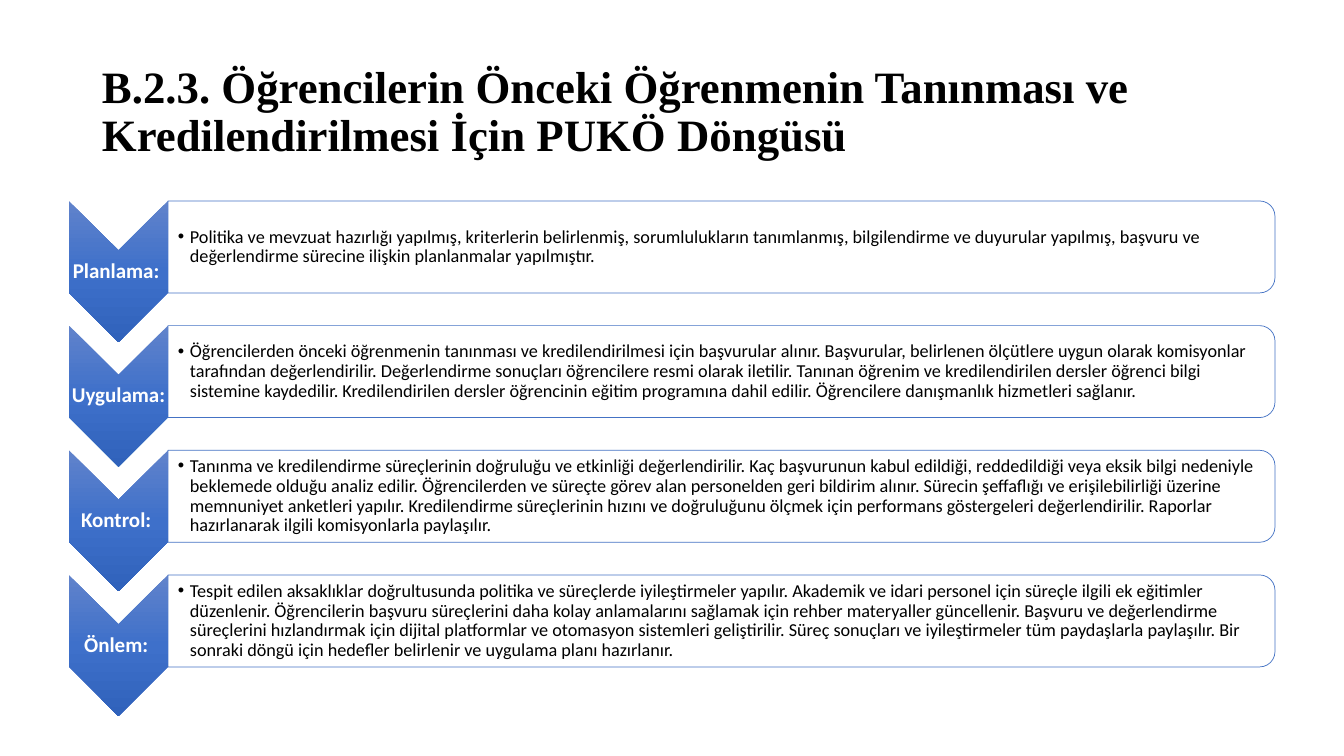
"""Build the slide on the four steps of the prior learning cycle."""
import copy

import lxml.etree
import pptx
import pptx.dml.color
import pptx.enum.shapes
import pptx.enum.text
import pptx.oxml.ns
import pptx.util

TITLE = "B.2.3. Öğrencilerin Önceki Öğrenmenin Tanınması ve Kredilendirilmesi İçin PUKÖ Döngüsü"
STEPS = [
    ("Planlama: ",
     "Politika ve mevzuat hazırlığı yapılmış, kriterlerin belirlenmiş, sorumlulukların tanımlanmış, "
     "bilgilendirme ve duyurular yapılmış, başvuru ve değerlendirme sürecine ilişkin planlanmalar "
     "yapılmıştır."),
    ("Uygulama: ",
     "Öğrencilerden önceki öğrenmenin tanınması ve kredilendirilmesi için başvurular alınır. "
     "Başvurular, belirlenen ölçütlere uygun olarak komisyonlar tarafından değerlendirilir. "
     "Değerlendirme sonuçları öğrencilere resmi olarak iletilir. Tanınan öğrenim ve kredilendirilen "
     "dersler öğrenci bilgi sistemine kaydedilir. Kredilendirilen dersler öğrencinin eğitim programına "
     "dahil edilir. Öğrencilere danışmanlık hizmetleri sağlanır."),
    ("Kontrol: ",
     "Tanınma ve kredilendirme süreçlerinin doğruluğu ve etkinliği değerlendirilir. Kaç başvurunun "
     "kabul edildiği, reddedildiği veya eksik bilgi nedeniyle beklemede olduğu analiz edilir. "
     "Öğrencilerden ve süreçte görev alan personelden geri bildirim alınır. Sürecin şeffaflığı ve "
     "erişilebilirliği üzerine memnuniyet anketleri yapılır. Kredilendirme süreçlerinin hızını ve "
     "doğruluğunu ölçmek için performans göstergeleri değerlendirilir. Raporlar hazırlanarak ilgili "
     "komisyonlarla paylaşılır."),
    ("Önlem: ",
     "Tespit edilen aksaklıklar doğrultusunda politika ve süreçlerde iyileştirmeler yapılır. Akademik "
     "ve idari personel için süreçle ilgili ek eğitimler düzenlenir. Öğrencilerin başvuru süreçlerini "
     "daha kolay anlamalarını sağlamak için rehber materyaller güncellenir. Başvuru ve değerlendirme "
     "süreçlerini hızlandırmak için dijital platformlar ve otomasyon sistemleri geliştirilir. Süreç "
     "sonuçları ve iyileştirmeler tüm paydaşlarla paylaşılır. Bir sonraki döngü için hedefler "
     "belirlenir ve uygulama planı hazırlanır."),
]

RGB = pptx.dml.color.RGBColor
BLACK = RGB(0x00, 0x00, 0x00)
WHITE = RGB(0xFF, 0xFF, 0xFF)
BLUE = RGB(0x44, 0x72, 0xC4)
SHADES = [(0, RGB(0x61, 0x83, 0xCB)), (0.5, RGB(0x3E, 0x70, 0xCA)), (1, RGB(0x30, 0x62, 0xBB))]

WIDE, HIGH = 1344, 756
SCALE = 12192000 / WIDE
LEFT, FIRST, LAST = 69, 201, 575
ARROW_W, ARROW_H = 99, 141
PANEL_W, PANEL_H = 1107, 92
PAD = 5
HANG = 12

SHAPE = pptx.enum.shapes.MSO_SHAPE
ALIGN = pptx.enum.text.PP_ALIGN
qn = pptx.oxml.ns.qn


def px(size):
    return pptx.util.Emu(round(size * SCALE))


def add_turned(slide, kind, x, y, w, h):
    """Add a shape turned a quarter so that it covers the given area."""
    shape = slide.shapes.add_shape(
        kind, px(x + (w - h) / 2), px(y + (h - w) / 2), px(h), px(w))
    shape.rotation = 90
    shape.shadow.inherit = False
    return shape


def add_text(slide, area, text, font, size, color, bold, align, inset):
    """Add a one-paragraph box, centred in height, and return the paragraph."""
    frame = slide.shapes.add_textbox(*map(px, area)).text_frame
    frame.word_wrap = True
    frame.vertical_anchor = pptx.enum.text.MSO_ANCHOR.MIDDLE
    (frame.margin_left, frame.margin_top,
     frame.margin_right, frame.margin_bottom) = map(px, inset)
    para = frame.paragraphs[0]
    para.alignment = align
    para.line_spacing = 0.9
    run = para.add_run()
    run.text = text
    run.font.name = font
    run.font.size = pptx.util.Pt(size)
    run.font.bold = bold
    run.font.color.rgb = color
    return para


def add_bullet(para):
    props = para._p.get_or_add_pPr()
    props.set("marL", str(px(HANG)))
    props.set("indent", str(-px(HANG)))
    lxml.etree.SubElement(props, qn("a:buFont")).set("typeface", "Arial")
    lxml.etree.SubElement(props, qn("a:buChar")).set("char", "•")


def shade(shape):
    shape.fill.gradient()
    grad = shape._element.spPr.find(qn("a:gradFill"))
    grad.set("rotWithShape", "0")
    grad.find(qn("a:lin")).set("ang", "5400000")
    stops = grad.find(qn("a:gsLst"))
    stops.insert(1, copy.deepcopy(stops[0]))
    for stop, (place, color) in zip(shape.fill.gradient_stops, SHADES):
        stop.position = place
        stop.color.rgb = color


def add_step(slide, top, label, body):
    panel_x = LEFT + ARROW_W
    panel = add_turned(slide, SHAPE.ROUND_2_SAME_RECTANGLE, panel_x, top, PANEL_W, PANEL_H)
    panel.fill.solid()
    panel.fill.fore_color.rgb = WHITE
    tint = panel._element.spPr.find(qn("a:solidFill"))[0]
    lxml.etree.SubElement(tint, qn("a:alpha")).set("val", "90000")
    panel.line.color.rgb = BLUE
    panel.line.width = pptx.util.Pt(0.5)

    arrow = add_turned(slide, SHAPE.CHEVRON, LEFT, top, ARROW_W, ARROW_H)
    shade(arrow)
    arrow.line.fill.background()

    notch = ARROW_W / 2
    add_text(slide, (LEFT, top + notch, ARROW_W, ARROW_H - 2 * notch), label,
             "Calibri", 15, WHITE, True, ALIGN.CENTER, (1, 1, 1, 1))
    area = (panel_x, top + PAD, PANEL_W - PAD, PANEL_H - 2 * PAD)
    add_bullet(add_text(slide, area, body, "Calibri", 13, BLACK, False,
                        ALIGN.LEFT, (10, 1, 1, 1)))


def main():
    deck = pptx.Presentation()
    deck.slide_width, deck.slide_height = px(WIDE), px(HIGH)
    slide = deck.slides.add_slide(deck.slide_layouts[6])
    add_text(slide, (92, 40, 1159, 146), TITLE, "Times New Roman", 32, BLACK, True,
             ALIGN.LEFT, (10, 5, 10, 5))
    pitch = (LAST - FIRST) / (len(STEPS) - 1)
    for i, (label, body) in enumerate(STEPS):
        add_step(slide, FIRST + i * pitch, label, body)
    deck.save("out.pptx")


if __name__ == "__main__":
    main()
